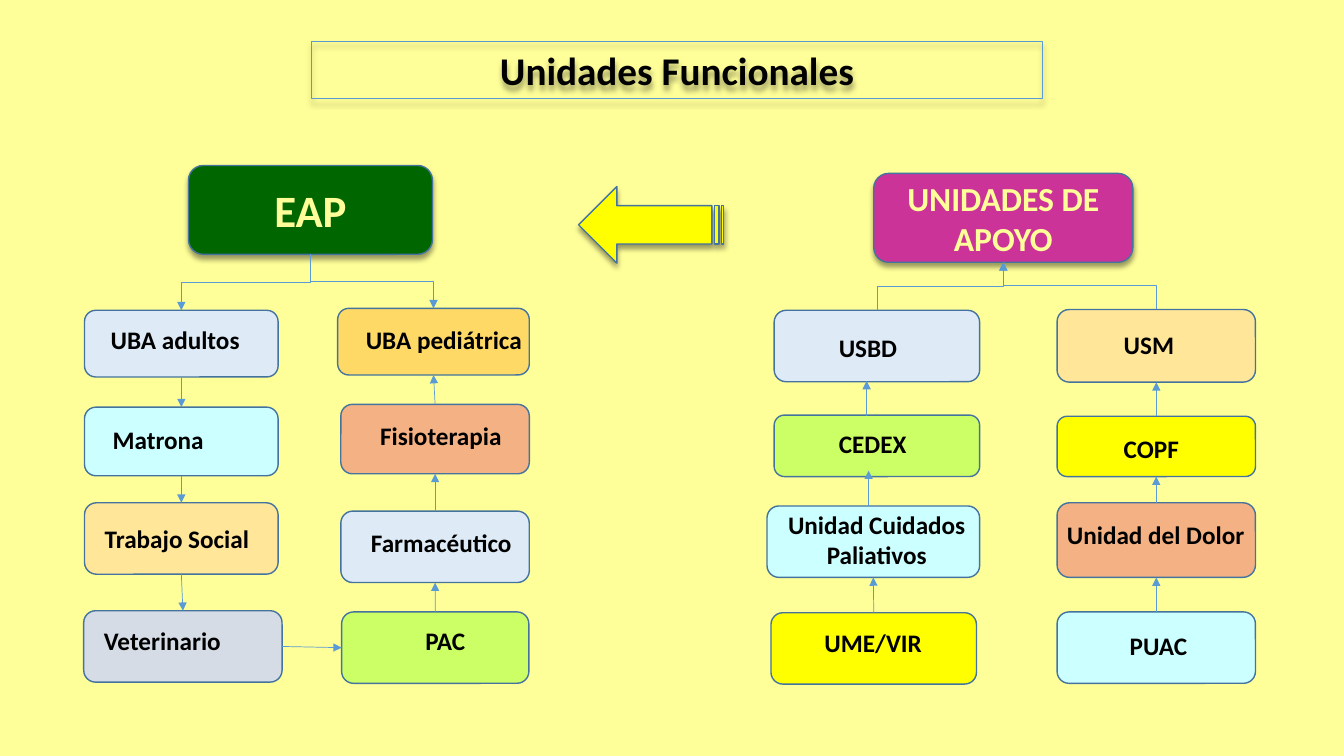
import pptx
import pptx.dml.color
import pptx.enum.shapes
import pptx.enum.text
import pptx.oxml
import pptx.oxml.ns
import pptx.util

Cm, Pt = pptx.util.Cm, pptx.util.Pt
RGBColor = pptx.dml.color.RGBColor
SHAPE = pptx.enum.shapes.MSO_SHAPE
CONNECTOR = pptx.enum.shapes.MSO_CONNECTOR
ANCHOR = pptx.enum.text.MSO_ANCHOR
ALIGN = pptx.enum.text.PP_ALIGN
qn = pptx.oxml.ns.qn

CREAM = RGBColor(0xFF, 0xFF, 0x99)
BLACK = RGBColor(0x00, 0x00, 0x00)
GREEN = RGBColor(0x00, 0x66, 0x00)
MAGENTA = RGBColor(0xCC, 0x33, 0x99)
YELLOW = RGBColor(0xFF, 0xFF, 0x00)
AQUA = RGBColor(0xCC, 0xFF, 0xFF)
LIME = RGBColor(0xCC, 0xFF, 0x66)
PALE_BLUE = RGBColor(0xDE, 0xEB, 0xF7)
GREY = RGBColor(0xD6, 0xDC, 0xE5)
GOLD = RGBColor(0xFF, 0xD9, 0x66)
SAND = RGBColor(0xFF, 0xE6, 0x99)
SALMON = RGBColor(0xF4, 0xB1, 0x83)
OUTLINE = RGBColor(0x43, 0x73, 0x9E)
BLUE = RGBColor(0x5B, 0x9B, 0xD5)

# Content: lengths in cm, boxes as left, top, width, height
TITLE = ("Unidades Funcionales", (7.85, 1.04, 18.42, 1.45))
ARROW_BOX = (14.58, 4.7, 3.66, 1.93)
HEADS = [
    ("EAP", (4.75, 4.17, 6.15, 2.24), GREEN, 32),
    ("UNIDADES DE APOYO", (22.02, 4.37, 6.53, 2.24), MAGENTA, 24),
]
# Units: text, box, fill, text offset from the box's left and top
UNITS = [
    ("UBA adultos", (2.13, 7.82, 4.88, 1.68), PALE_BLUE, (0.66, 0.36)),
    ("Matrona", (2.13, 10.26, 4.88, 1.73), AQUA, (0.71, 0.43)),
    ("Trabajo Social", (2.13, 12.67, 4.88, 1.8), SAND, (0.51, 0.53)),
    ("Veterinario", (2.11, 15.39, 5.0, 1.8), GREY, (0.51, 0.36)),
    ("UBA pediátrica", (8.51, 7.77, 4.83, 1.68), GOLD, (0.71, 0.41)),
    ("Fisioterapia", (8.59, 10.19, 4.75, 1.75), SALMON, (0.99, 0.41)),
    ("Farmacéutico", (8.59, 12.88, 4.75, 1.8), PALE_BLUE, (0.76, 0.41)),
    ("PAC", (8.61, 15.42, 4.72, 1.8), LIME, (2.11, 0.33)),
    ("USBD", (19.51, 7.82, 5.18, 1.8), PALE_BLUE, (1.63, 0.56)),
    ("CEDEX", (19.51, 10.46, 5.18, 1.55), LIME, (1.63, 0.33)),
    ("Unidad Cuidados Paliativos", (19.33, 12.75, 5.36, 1.8), AQUA, (0.26, 0.05)),
    ("UME/VIR", (19.43, 15.44, 5.18, 1.8), YELLOW, (1.35, 0.36)),
    ("USM", (26.64, 7.8, 5.0, 1.83), SAND, (1.68, 0.51)),
    ("COPF", (26.64, 10.49, 5.0, 1.52), YELLOW, (1.68, 0.43)),
    ("Unidad del Dolor", (26.64, 12.67, 5.0, 1.88), SALMON, (0.25, 0.43)),
    ("PUAC", (26.64, 15.42, 5.0, 1.8), AQUA, (1.83, 0.46)),
]
CENTRED = {"Unidad Cuidados Paliativos"}
TOP, LEFT, BOTTOM, RIGHT = range(4)
JOINS = [
    ("UBA adultos", BOTTOM, "Matrona", TOP),
    ("Matrona", BOTTOM, "Trabajo Social", TOP),
    ("Trabajo Social", BOTTOM, "Veterinario", TOP),
    ("Veterinario", RIGHT, "PAC", LEFT),
    ("PAC", TOP, "Farmacéutico", BOTTOM),
    ("Farmacéutico", TOP, "Fisioterapia", BOTTOM),
    ("Fisioterapia", TOP, "UBA pediátrica", BOTTOM),
    ("UME/VIR", TOP, "Unidad Cuidados Paliativos", BOTTOM),
    ("PUAC", TOP, "Unidad del Dolor", BOTTOM),
    ("Unidad del Dolor", TOP, "COPF", BOTTOM),
    ("COPF", TOP, "USM", BOTTOM),
]
ELBOWS = [
    ("EAP", BOTTOM, "UBA adultos", TOP),
    ("EAP", BOTTOM, "UBA pediátrica", TOP),
    ("USBD", TOP, "UNIDADES DE APOYO", BOTTOM),
    ("USM", TOP, "UNIDADES DE APOYO", BOTTOM),
]
FREE_ARROWS = [(21.84, 10.49, 21.84, 9.6), (21.89, 12.75, 21.89, 11.86)]

ROUND_INSET = 0.049  # text inset of a rounded rectangle, as a share of its height
SHADOW = (
    '<a:outerShdw xmlns:a="http://schemas.openxmlformats.org/drawingml/2006/main" '
    'blurRad="50800" dist="38100" dir="5400000" algn="t" rotWithShape="0">'
    '<a:srgbClr val="000000"><a:alpha val="40000"/></a:srgbClr></a:outerShdw>'
)


def apply(obj, values):
    for name, value in values.items():
        setattr(obj, name, value)


def style(sp, fill, line, width, shadow=False):
    if fill is None:
        sp.fill.background()
    else:
        sp.fill.solid()
        sp.fill.fore_color.rgb = fill
    sp.line.color.rgb = line
    sp.line.width = Pt(width)
    sp.shadow.inherit = False
    if shadow:
        effects = sp.element.spPr.find(qn("a:effectLst"))
        effects.append(pptx.oxml.parse_xml(SHADOW))


def write(sp, text, size, color, align, **frame):
    tf = sp.text_frame
    apply(tf, {"word_wrap": True, "auto_size": pptx.enum.text.MSO_AUTO_SIZE.NONE, **frame})
    p = tf.paragraphs[0]
    p.alignment = align
    r = p.add_run()
    r.text = text
    apply(r.font, {"name": "Calibri", "size": Pt(size), "bold": True})
    r.font.color.rgb = color


def add_arrow(s, kind, ends=(0, 0, 0, 0)):
    c = s.shapes.add_connector(kind, *map(Cm, ends))
    c.line.color.rgb = BLUE
    c.line.width = Pt(0.5)
    ln = c.element.spPr.find(qn("a:ln"))
    ln.append(ln.makeelement(qn("a:tailEnd"), {"type": "triangle"}))
    c.element.spPr.append(ln.makeelement(qn("a:effectLst"), {}))
    return c


def join(c, boxes, start, start_side, end, end_side):
    c.begin_connect(boxes[start], start_side)
    c.end_connect(boxes[end], end_side)


def turn_vertical(c):
    """Make an elbow leave and arrive vertically."""
    dx, dy = c.end_x - c.begin_x, c.end_y - c.begin_y
    mid_x, mid_y = (c.begin_x + c.end_x) // 2, (c.begin_y + c.end_y) // 2
    w, h = abs(dy), abs(dx)
    apply(c, {"left": mid_x - w // 2, "top": mid_y - h // 2, "width": w, "height": h})
    xfrm = c.element.spPr.find(qn("a:xfrm"))
    quarter = 90 if dx * dy < 0 and dy > 0 or dx > 0 and dy < 0 else 270
    xfrm.set("rot", str(quarter * 60000))
    xfrm.set("flipH", "1" if dx > 0 else "0")
    xfrm.set("flipV", "1" if dy < 0 else "0")


def main():
    prs = pptx.Presentation()
    apply(prs, {"slide_width": Cm(33.87), "slide_height": Cm(19.05)})
    s = prs.slides.add_slide(prs.slide_layouts[5])
    s.background.fill.solid()
    s.background.fill.fore_color.rgb = CREAM

    # Title
    text, box = TITLE
    title = s.shapes.title
    apply(title, dict(zip(("left", "top", "width", "height"), map(Cm, box))))
    style(title, None, BLUE, 0.75, shadow=True)
    write(title, text, 28, BLACK, ALIGN.CENTER, vertical_anchor=ANCHOR.TOP)

    # Heads of the two groups
    boxes = {}
    for text, box, fill, size in HEADS:
        sp = boxes[text] = s.shapes.add_shape(SHAPE.ROUNDED_RECTANGLE, *map(Cm, box))
        style(sp, fill, OUTLINE, 1, shadow=True)
        write(sp, text, size, CREAM, ALIGN.CENTER, vertical_anchor=ANCHOR.MIDDLE)

    # Units
    for text, box, fill, (dx, dy) in UNITS:
        sp = boxes[text] = s.shapes.add_shape(SHAPE.ROUNDED_RECTANGLE, *map(Cm, box))
        style(sp, fill, OUTLINE, 1)
        inset = ROUND_INSET * box[3]
        write(sp, text, 18, BLACK, ALIGN.CENTER if text in CENTRED else ALIGN.LEFT,
              vertical_anchor=ANCHOR.TOP, margin_right=0, margin_bottom=0,
              margin_left=Cm(max(dx - inset, 0)), margin_top=Cm(max(dy - inset, 0)))

    # Arrow between the groups
    sp = s.shapes.add_shape(SHAPE.STRIPED_RIGHT_ARROW, *map(Cm, ARROW_BOX))
    sp.rotation = 180
    style(sp, YELLOW, OUTLINE, 1, shadow=True)

    # Connectors
    for link in JOINS:
        join(add_arrow(s, CONNECTOR.STRAIGHT), boxes, *link)
    for link in ELBOWS:
        c = add_arrow(s, CONNECTOR.ELBOW)
        join(c, boxes, *link)
        turn_vertical(c)
    for ends in FREE_ARROWS:
        add_arrow(s, CONNECTOR.STRAIGHT, ends)

    prs.save("out.pptx")


if __name__ == "__main__":
    main()
